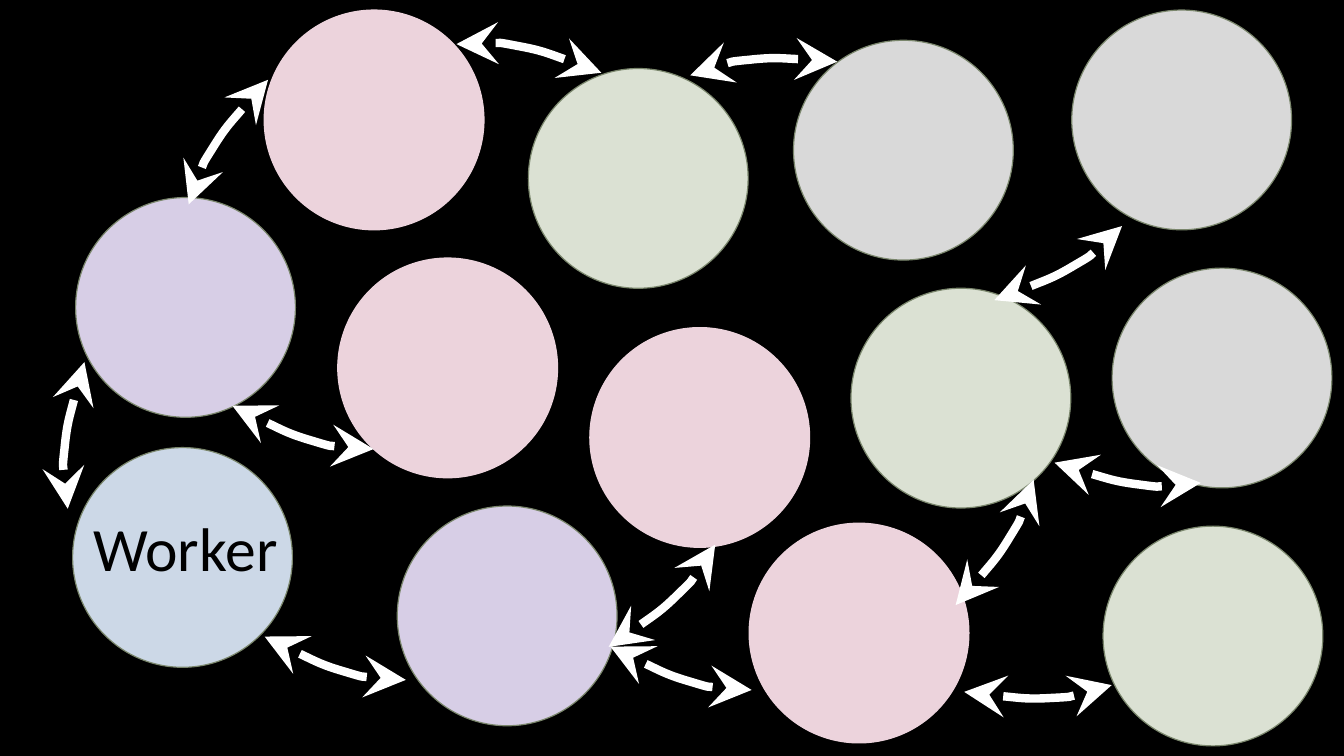
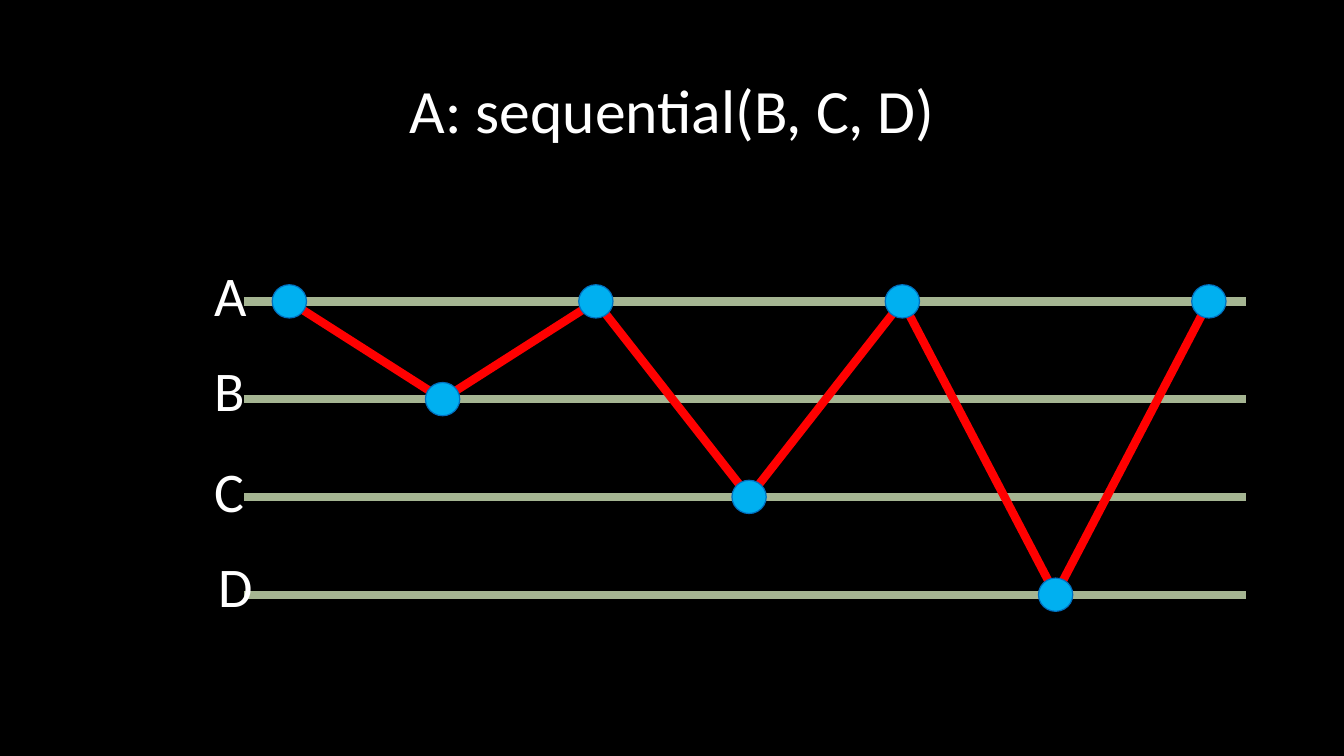
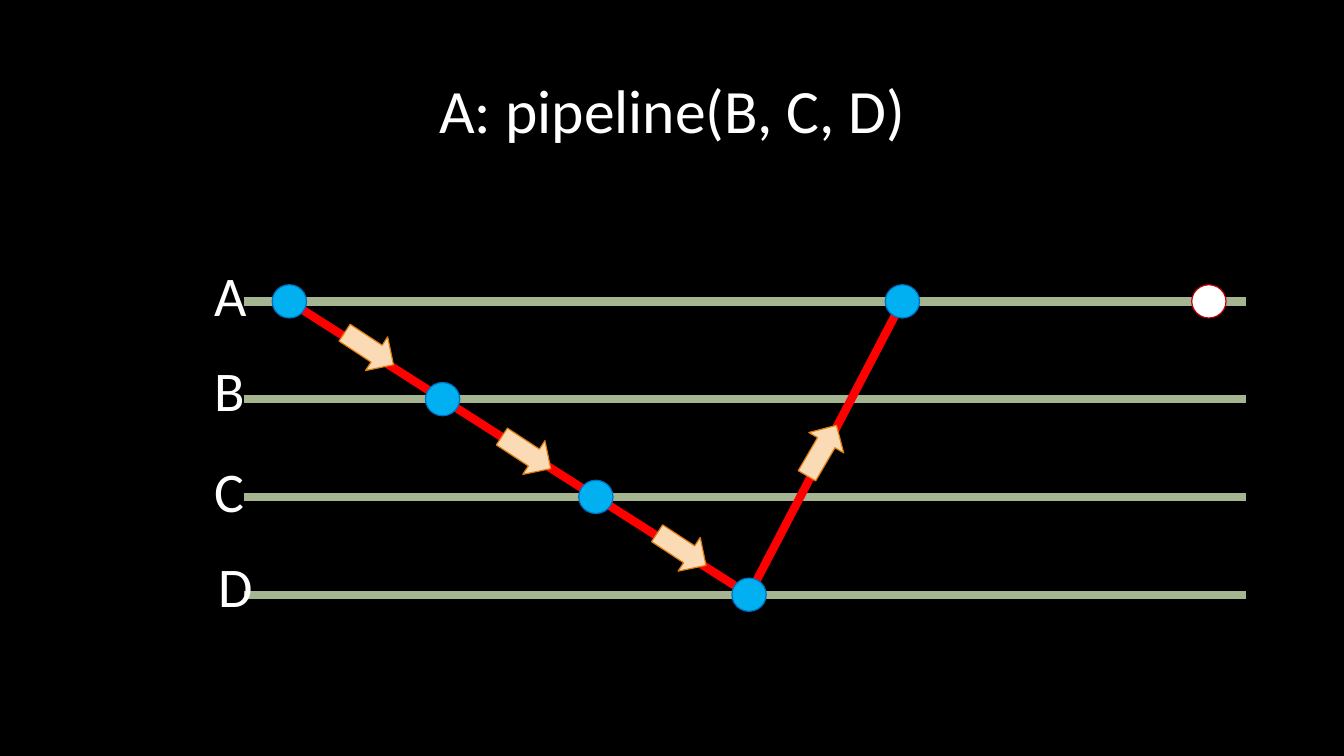
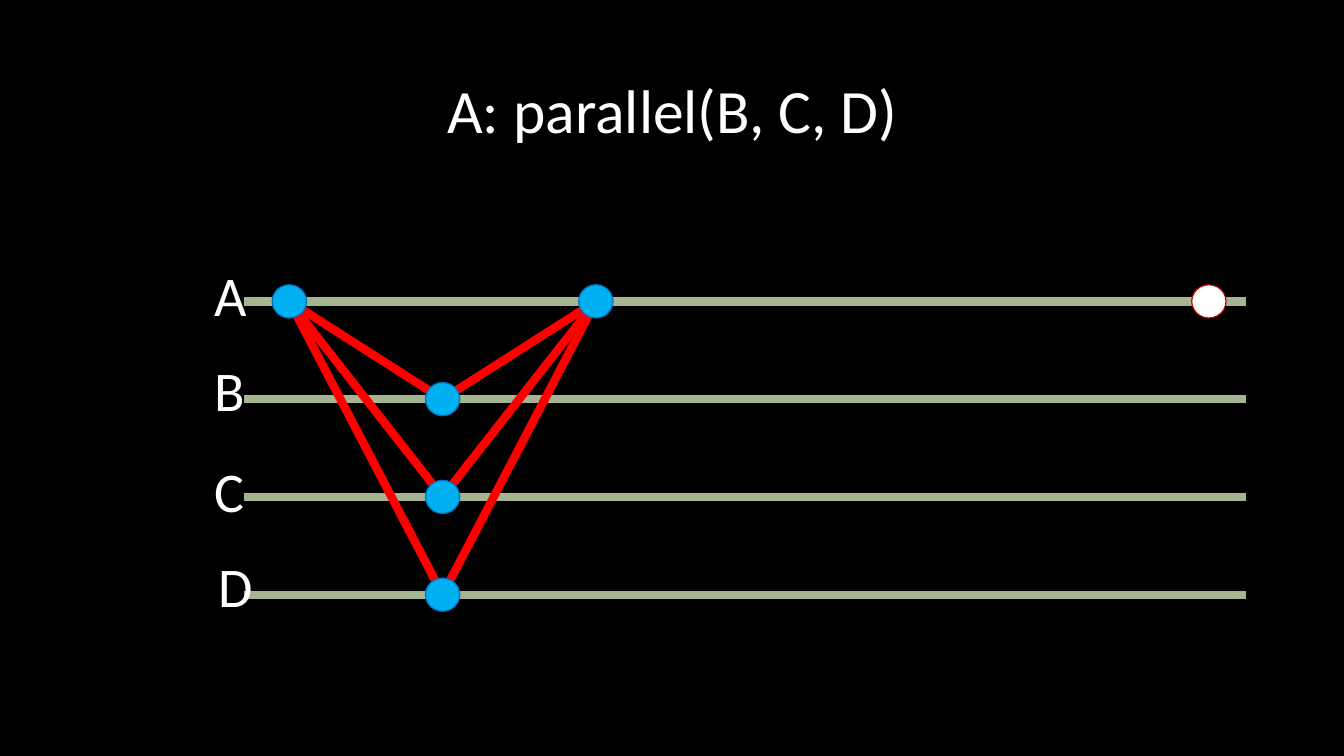
from dataclasses import dataclass
from typing import NamedTuple

from lxml.etree import SubElement
from pptx import Presentation
from pptx.dml.color import RGBColor
from pptx.enum.shapes import MSO_CONNECTOR as Link, MSO_SHAPE as Preset
from pptx.enum.text import MSO_ANCHOR as Anchor, MSO_AUTO_SIZE as AutoSize, PP_ALIGN as Align
from pptx.oxml.ns import qn
from pptx.util import Inches, Pt


@dataclass(frozen=True)
class Theme:
    font: str = "Calibri"
    black: str = "000000"
    white: str = "FFFFFF"
    blue: str = "CCD8E7"
    purple: str = "D7CEE6"
    pink: str = "ECD3DC"
    green: str = "DBE1D3"
    grey: str = "D9D9D9"
    outline: str = "7A866C"
    rail: str = "A5B592"
    link: str = "FF0000"
    node: str = "00B0F0"
    node_line: str = "0070C0"
    idle_line: str = "C00000"
    arrow: str = "FADBB5"
    arrow_line: str = "DD7E0E"
    title_size: float = 44
    label_size: float = 40
    thick: float = 6
    thin: float = 0.85


THEME = Theme()


class Worker(NamedTuple):
    left: float
    top: float
    fill: str


class Turned(NamedTuple):
    """A repeated shape with its own place and rotation."""
    left: float
    top: float
    rotation: float


class Lane(NamedTuple):
    name: str
    label_left: float
    label_top: float


@dataclass(frozen=True)
class Schedule:
    """Each route names the lane it visits in successive columns."""
    title: str
    routes: tuple[str, ...]
    idle: bool = True
    arrows: tuple[Turned, ...] = ()


WORKER_SIZE = 2.18
WORKERS = [
    Worker(0.72, 4.44, THEME.blue),
    Worker(0.75, 1.96, THEME.purple),
    Worker(2.62, 0.1, THEME.pink),
    Worker(3.35, 2.56, THEME.pink),
    Worker(3.94, 5.02, THEME.purple),
    Worker(5.24, 0.68, THEME.green),
    Worker(5.85, 3.25, THEME.pink),
    Worker(7.43, 5.19, THEME.pink),
    Worker(10.94, 5.22, THEME.green),
    Worker(8.44, 2.86, THEME.green),
    Worker(11.03, 2.66, THEME.grey),
    Worker(7.87, 0.4, THEME.grey),
    Worker(10.63, 0.1, THEME.grey),
]

# In hundredths of an inch: a start point, then two cubic curves of three points each.
CURVE = [(43, 0), (29, 28), (15, 56), (8, 80), (1, 103), (0, 121), (0, 140)]
CURVE_UNIT = Inches(0.01)
EXCHANGES = [
    Turned(0.54, 3.62, 349.4),
    Turned(3.11, 5.83, 270),
    Turned(2.05, 0.71, 15.4),
    Turned(6.35, 5.21, 209.1),
    Turned(6.54, 5.93, 270),
    Turned(5.03, -0.12, 84.1),
    Turned(2.79, 3.54, 270),
    Turned(7.36, -0.02, 67.6),
    Turned(10.08, 6.13, 250.3),
    Turned(9.65, 4.68, 194.8),
    Turned(10.97, 3.99, 260.8),
    Turned(10.28, 1.91, 222.8),
]

LANES = [Lane("A", 2.13, 2.54), Lane("B", 2.13, 3.48),
         Lane("C", 2.13, 4.48), Lane("D", 2.17, 5.42)]
LANE_NAMES = "".join(lane.name for lane in LANES)
RAIL_LEFT, RAIL_RIGHT = 2.42, 12.36
FIRST_COLUMN, COLUMN_STEP, LAST_COLUMN = 2.87, 1.52, 6
FIRST_LANE, LANE_STEP = 2.99, 0.97
NODE_WIDTH, NODE_HEIGHT = 0.34, 0.33

SCHEDULES = [
    Schedule("A: sequential(B, C, D)", ("ABACADA",), idle=False),
    Schedule("A: pipeline(B, C, D)", ("ABCDA",), arrows=(
        Turned(3.37, 3.26, 33.3), Turned(4.93, 4.29, 33.3),
        Turned(6.47, 5.25, 33.3), Turned(7.86, 4.27, 300.3))),
    Schedule("A: parallel(B, C, D)", ("ABA", "ACA", "ADA")),
]


def rgb(value: str) -> RGBColor:
    return RGBColor.from_string(value)


def style_line(line, color: str, width: float) -> None:
    line.color.rgb = rgb(color)
    line.width = Pt(width)


def add_preset(slide, preset, left: float, top: float, width: float, height: float,
               fill: str, line: str):
    shape = slide.shapes.add_shape(preset, Inches(left), Inches(top),
                                   Inches(width), Inches(height))
    shape.shadow.inherit = False
    shape.fill.solid()
    shape.fill.fore_color.rgb = rgb(fill)
    style_line(shape.line, line, THEME.thin)
    return shape


def add_line(slide, start: tuple[float, float], end: tuple[float, float], color: str) -> None:
    line = slide.shapes.add_connector(Link.STRAIGHT, *map(Inches, start + end))
    style_line(line.line, color, THEME.thick)
    SubElement(line._element.spPr, qn("a:effectLst"))


def write(para, text: str, size: float, color: str) -> None:
    para.alignment = Align.CENTER
    span = para.add_run()
    span.text = text
    span.font.name = THEME.font
    span.font.size = Pt(size)
    span.font.color.rgb = rgb(color)


def add_label(slide, text: str, left: float, top: float, width: float, height: float,
              size: float, color: str, anchor=Anchor.TOP) -> None:
    box = slide.shapes.add_textbox(Inches(left), Inches(top), Inches(width), Inches(height))
    frame = box.text_frame
    frame.word_wrap = True
    frame.auto_size = AutoSize.SHAPE_TO_FIT_TEXT
    frame.vertical_anchor = anchor
    write(frame.paragraphs[0], text, size, color)


def add_exchange(slide, place: Turned) -> None:
    """Draw the curved double arrow between two workers."""
    builder = slide.shapes.build_freeform(*CURVE[0], scale=CURVE_UNIT)
    builder.add_line_segments(CURVE[1:], close=False)
    shape = builder.convert_to_shape(Inches(place.left), Inches(place.top))
    shape.rotation = place.rotation
    shape.shadow.inherit = False
    shape.fill.background()
    style_line(shape.line, THEME.white, THEME.thick)

    properties = shape._element.spPr
    outline = next(properties.iter(qn("a:path")))
    segments = outline.findall(qn("a:lnTo"))
    for first in range(0, len(segments), 3):
        curve = SubElement(outline, qn("a:cubicBezTo"))
        for segment in segments[first:first + 3]:
            curve.append(segment[0])
            outline.remove(segment)
    for end in ("a:headEnd", "a:tailEnd"):
        SubElement(properties.find(qn("a:ln")), qn(end), type="stealth", w="lg", len="lg")


def add_worker_slide(deck) -> None:
    slide = deck.slides.add_slide(deck.slide_layouts.get_by_name("Blank"))
    for worker in WORKERS:
        line = THEME.pink if worker.fill == THEME.pink else THEME.outline
        add_preset(slide, Preset.OVAL, worker.left, worker.top,
                   WORKER_SIZE, WORKER_SIZE, worker.fill, line)
    add_label(slide, "Worker", 0.29, 5.01, 3.1, 0.84,
              THEME.title_size, THEME.black, Anchor.MIDDLE)
    for exchange in EXCHANGES:
        add_exchange(slide, exchange)


def add_title(slide, text: str) -> None:
    title = slide.shapes.title
    title.left, title.top = Inches(0.92), Inches(0.4)
    title.width, title.height = Inches(11.5), Inches(1.45)
    title.text_frame.vertical_anchor = Anchor.MIDDLE
    para = title.text_frame.paragraphs[0]
    para.line_spacing = 0.9
    write(para, text, THEME.title_size, THEME.white)


def lane_y(row: int) -> float:
    return FIRST_LANE + row * LANE_STEP


def stop_at(column: int, lane: str) -> tuple[float, float]:
    return FIRST_COLUMN + column * COLUMN_STEP, lane_y(LANE_NAMES.index(lane))


def add_node(slide, center: tuple[float, float], fill: str, line: str) -> None:
    x, y = center
    add_preset(slide, Preset.OVAL, x - NODE_WIDTH / 2, y - NODE_HEIGHT / 2,
               NODE_WIDTH, NODE_HEIGHT, fill, line)


def add_schedule_slide(deck, schedule: Schedule) -> None:
    slide = deck.slides.add_slide(deck.slide_layouts.get_by_name("Title Only"))
    add_title(slide, schedule.title)
    for row, lane in enumerate(LANES):
        add_line(slide, (RAIL_LEFT, lane_y(row)), (RAIL_RIGHT, lane_y(row)), THEME.rail)
        add_label(slide, lane.name, lane.label_left, lane.label_top, 0.05, 0.77,
                  THEME.label_size, THEME.white)

    routes = [[stop_at(column, lane) for column, lane in enumerate(route)]
              for route in schedule.routes]
    for stops in routes:
        for start, end in zip(stops, stops[1:]):
            add_line(slide, start, end, THEME.link)
    if schedule.idle:
        add_node(slide, stop_at(LAST_COLUMN, "A"), THEME.white, THEME.idle_line)
    for stop in dict.fromkeys(stop for stops in routes for stop in stops):
        add_node(slide, stop, THEME.node, THEME.node_line)
    for arrow in schedule.arrows:
        shape = add_preset(slide, Preset.RIGHT_ARROW, arrow.left, arrow.top, 0.58, 0.4,
                           THEME.arrow, THEME.arrow_line)
        shape.rotation = arrow.rotation


def main() -> None:
    deck = Presentation()
    deck.slide_width, deck.slide_height = Inches(13.33), Inches(7.5)
    background = deck.slide_master.background.fill
    background.solid()
    background.fore_color.rgb = rgb(THEME.black)
    add_worker_slide(deck)
    for schedule in SCHEDULES:
        add_schedule_slide(deck, schedule)
    deck.save("out.pptx")


if __name__ == "__main__":
    main()
